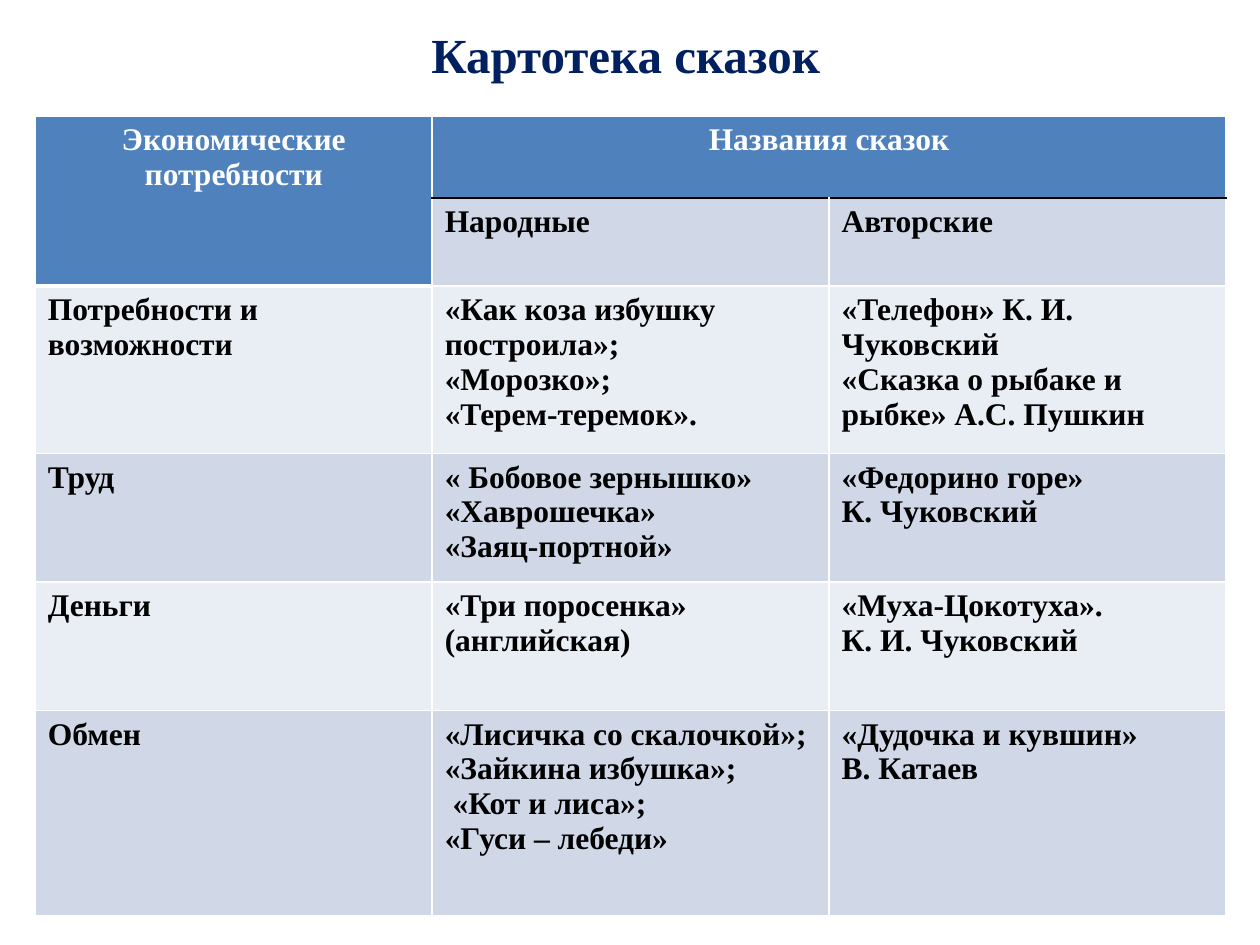
import pptx
import pptx.dml.color
import pptx.enum.text
import pptx.oxml
import pptx.oxml.ns
import pptx.util
from pptx.util import Inches

FONT = "Times New Roman"
WHITE, BLACK, NAVY = "FFFFFF", "000000", "002060"
HEADER, DARK_BAND, LIGHT_BAND = "4F81BD", "D0D8E8", "E9EDF4"
CENTER = pptx.enum.text.PP_ALIGN.CENTER
LEFT = pptx.enum.text.PP_ALIGN.LEFT

COLUMN_WIDTH = 3.15
ROW_HEIGHTS = [0.65, 0.65, 1.33, 1.02, 1.02, 1.63]
# Each cell is a list of paragraphs; an empty list is covered by a merge.
ROWS = [
    [["Экономические потребности"], ["Названия сказок"], []],
    [[], ["Народные"], ["Авторские"]],
    [["Потребности и возможности"],
     ["«Как коза избушку построила»;", "«Морозко»;", "«Терем-теремок»."],
     ["«Телефон» К. И. Чуковский", "«Сказка о рыбаке и рыбке» А.С. Пушкин"]],
    [["Труд"],
     ["« Бобовое зернышко»", "«Хаврошечка»", "«Заяц-портной»"],
     ["«Федорино горе»", "К. Чуковский"]],
    [["Деньги"],
     ["«Три поросенка» (английская)"],
     ["«Муха-Цокотуха».", "К. И. Чуковский"]],
    [["Обмен"],
     ["«Лисичка со скалочкой»;", "«Зайкина избушка»;", " «Кот и лиса»;", "«Гуси – лебеди»"],
     ["«Дудочка и кувшин»", "В. Катаев"]],
]


def rgb(value):
    return pptx.dml.color.RGBColor.from_string(value)


def line_xml(tag, color, width):
    return pptx.oxml.parse_xml(
        f'<a:{tag} {pptx.oxml.ns.nsdecls("a")} w="{pptx.util.Pt(width)}">'
        f'<a:solidFill><a:srgbClr val="{color}"/></a:solidFill></a:{tag}>')


def write_paragraphs(text_frame, lines, size, color, alignment):
    for index, line in enumerate(lines):
        paragraph = text_frame.add_paragraph() if index else text_frame.paragraphs[0]
        paragraph.alignment = alignment
        run = paragraph.add_run()
        run.text = line
        run.font.name = FONT
        run.font.size = pptx.util.Pt(size)
        run.font.bold = True
        run.font.color.rgb = rgb(color)


def add_title(slide, text):
    box = slide.shapes.add_textbox(Inches(0.59), Inches(0), Inches(8.75), Inches(0.85))
    frame = box.text_frame
    frame.word_wrap = True
    frame.vertical_anchor = pptx.enum.text.MSO_ANCHOR.MIDDLE
    write_paragraphs(frame, [text], 28, NAVY, CENTER)
    run = frame.paragraphs[0].runs[0]
    run.font._element.insert(0, line_xml("ln", "467AB8", 0.83))


def set_borders(cell, top=(WHITE, 1), bottom=(WHITE, 1)):
    """Put the four border lines ahead of the fill, as the schema requires."""
    properties = cell._tc.get_or_add_tcPr()
    sides = {"lnL": (WHITE, 1), "lnR": (WHITE, 1), "lnT": top, "lnB": bottom}
    for position, (tag, (color, width)) in enumerate(sides.items()):
        properties.insert(position, line_xml(tag, color, width))


def add_tale_table(slide):
    column_count = len(ROWS[0])
    frame = slide.shapes.add_table(
        len(ROWS), column_count, Inches(0.28), Inches(0.92),
        Inches(COLUMN_WIDTH * column_count), Inches(sum(ROW_HEIGHTS)))
    table = frame.table
    for column in table.columns:
        column.width = Inches(COLUMN_WIDTH)
    for row, height in zip(table.rows, ROW_HEIGHTS):
        row.height = Inches(height)
    table.cell(0, 0).merge(table.cell(1, 0))
    table.cell(0, 1).merge(table.cell(0, 2))

    for row_index, row in enumerate(ROWS):
        for column_index, lines in enumerate(row):
            cell = table.cell(row_index, column_index)
            in_header = row_index == 0 or (row_index == 1 and column_index == 0)
            band = DARK_BAND if row_index % 2 else LIGHT_BAND
            cell.fill.solid()
            cell.fill.fore_color.rgb = rgb(HEADER if in_header else band)
            if in_header and column_index == 0:
                set_borders(cell, bottom=(WHITE, 3))
            elif row_index == 0:
                set_borders(cell, bottom=(BLACK, 1))
            elif row_index == 1:
                set_borders(cell, top=(BLACK, 1))
            else:
                set_borders(cell)
            write_paragraphs(cell.text_frame, lines, 18,
                             WHITE if in_header else BLACK,
                             CENTER if in_header else LEFT)


def main():
    presentation = pptx.Presentation()
    presentation.slide_width = Inches(10)
    presentation.slide_height = Inches(7.5)
    slide = presentation.slides.add_slide(presentation.slide_layouts[6])
    add_title(slide, "Картотека сказок")
    add_tale_table(slide)
    presentation.save("out.pptx")


if __name__ == "__main__":
    main()
